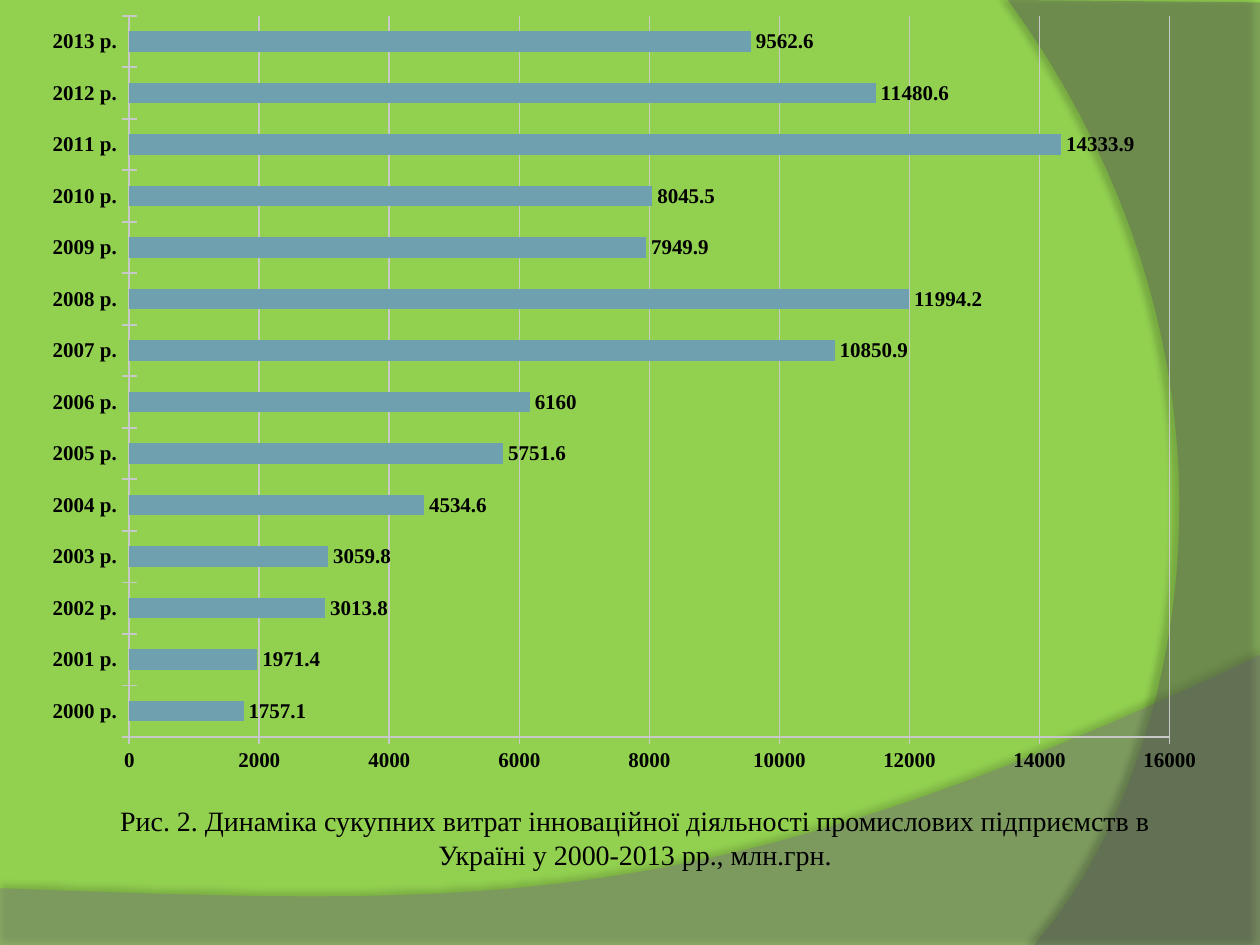
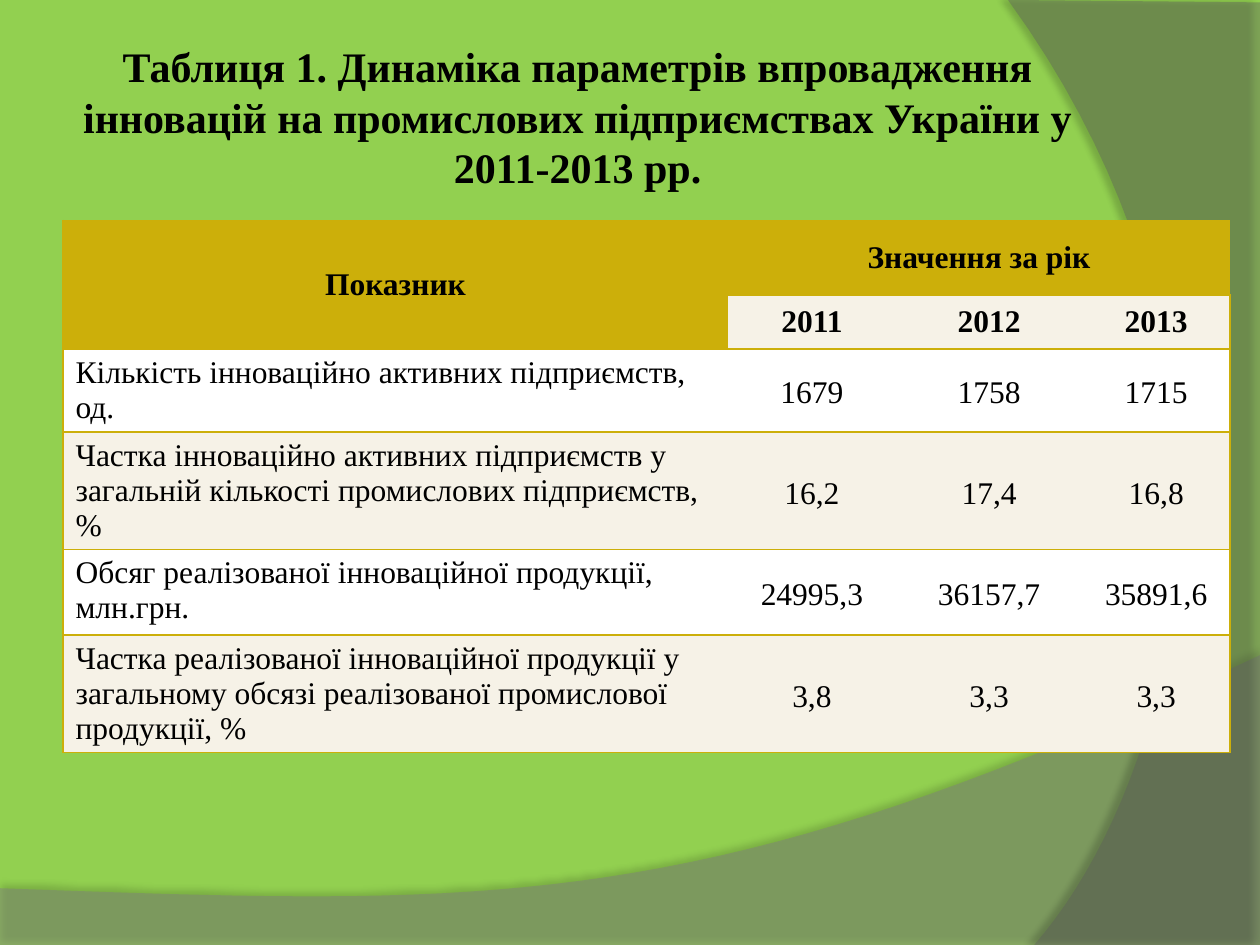
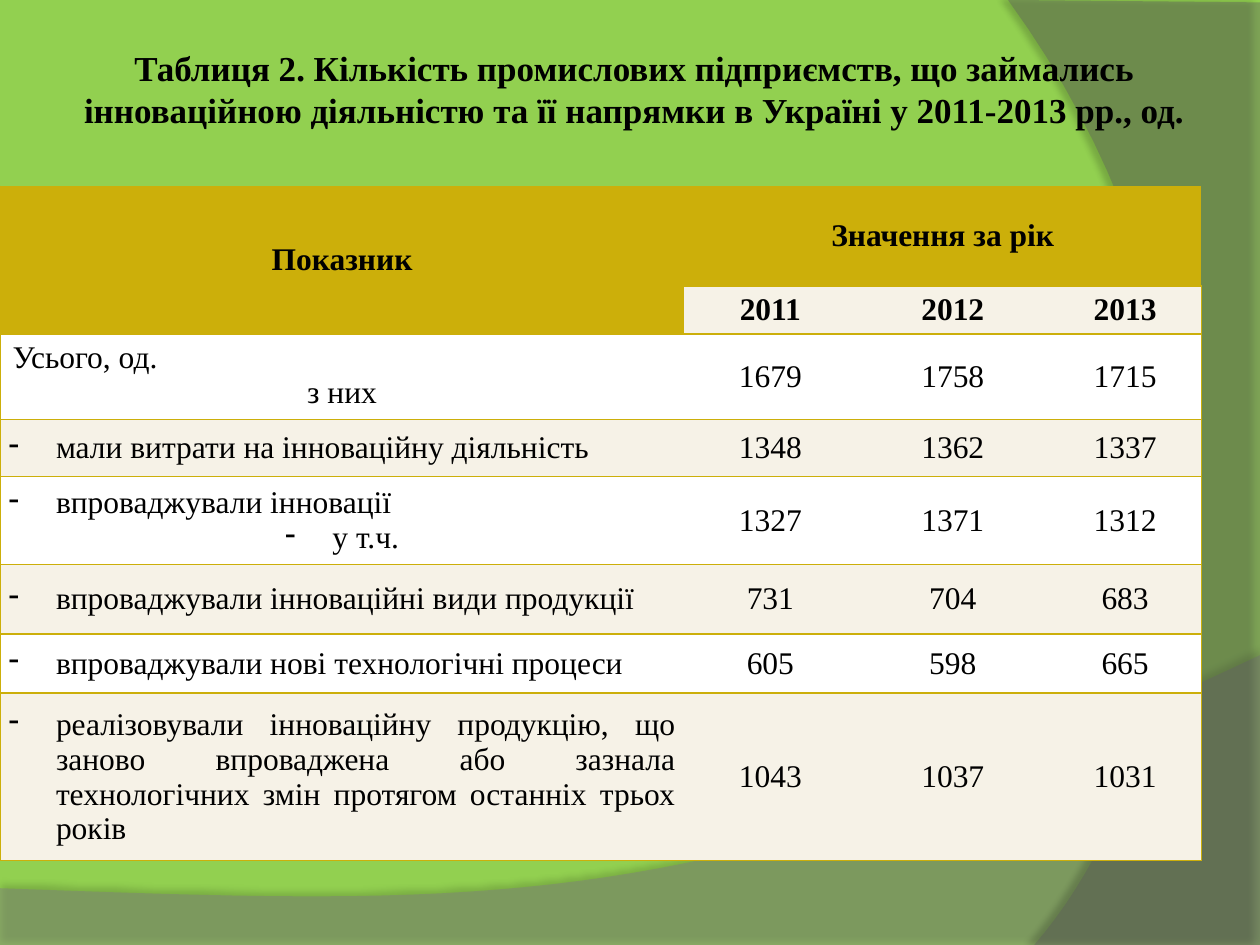
import pptx
import pptx.chart.data
import pptx.dml.color
import pptx.enum.chart
import pptx.enum.text
import pptx.oxml
import pptx.oxml.ns
import pptx.util

Pt = pptx.util.Pt
FONT = "Times New Roman"
HUE = {
    "back": "92D050", "text": "000000", "wave": "7F7F7F", "side": "5E5E5E",
    "gold": "CCAF0A", "cream": "F6F2E7", "white": "FFFFFF",
    "bar": "6EA0B0", "grid": "C8C8C8",
}
ALIGN = {
    "l": pptx.enum.text.PP_ALIGN.LEFT,
    "c": pptx.enum.text.PP_ALIGN.CENTER,
    "j": pptx.enum.text.PP_ALIGN.JUSTIFY,
}
MID = pptx.enum.text.MSO_ANCHOR.MIDDLE
YEARS = ["2011", "2012", "2013"]
COSTS = [1757.1, 1971.4, 3013.8, 3059.8, 4534.6, 5751.6, 6160,
         10850.9, 11994.2, 7949.9, 8045.5, 14333.9, 11480.6, 9562.6]
SHARES = [
    ("Кількість інноваційно активних підприємств, од.", "l",
     ["1679", "1758", "1715"]),
    ("Частка інноваційно активних підприємств у загальній кількості "
     "промислових підприємств, %", "l", ["16,2", "17,4", "16,8"]),
    ("Обсяг реалізованої інноваційної продукції, млн.грн.", "l",
     ["24995,3", "36157,7", "35891,6"]),
    ("Частка реалізованої інноваційної продукції у загальному обсязі "
     "реалізованої промислової продукції, %", "l", ["3,8", "3,3", "3,3"]),
]
FIRMS = [
    ("Усього, од.\nз них", "lc", ["1679", "1758", "1715"]),
    ("мали витрати на інноваційну діяльність", "j",
     ["1348", "1362", "1337"]),
    ("впроваджували інновації\nу т.ч.", "jc", ["1327", "1371", "1312"]),
    ("впроваджували інноваційні види продукції", "j",
     ["731", "704", "683"]),
    ("впроваджували нові технологічні процеси", "j",
     ["605", "598", "665"]),
    ("реалізовували інноваційну продукцію, що заново впроваджена або "
     "зазнала технологічних змін протягом останніх трьох років", "j",
     ["1043", "1037", "1031"]),
]


def color(name):
    """Return the named colour."""
    return pptx.dml.color.RGBColor.from_string(HUE[name])


def node(body):
    """Parse one drawing element."""
    head, tail = body.split(">", 1)
    tag, gap, rest = head.partition(" ")
    space = pptx.oxml.ns.nsdecls("a")
    return pptx.oxml.parse_xml(f"{tag} {space}{gap}{rest}>{tail}")


def style(font, size, bold=False):
    """Set the shared typeface with a size and weight."""
    font.name, font.size, font.bold = FONT, Pt(size), bold
    font.color.rgb = color("text")


def write(frame, text, size=18, bold=False, align="c", dash=False, space=None):
    """Fill a frame with one paragraph per line and one align letter each."""
    frame.word_wrap = True
    for i, (line, side) in enumerate(zip(text.split("\n"), align)):
        para = frame.add_paragraph() if i else frame.paragraphs[0]
        para.alignment = ALIGN[side]
        if space:
            para.line_spacing = space
        if dash:
            prop = para._p.get_or_add_pPr()
            prop.set("marL", str(Pt(27)))
            prop.set("indent", str(-Pt(27)))
            prop.append(node('<a:buChar char="-"></a:buChar>'))
        run = para.add_run()
        run.text = line
        style(run.font, size, bold)


def curve(ends, steps=40):
    """Sample a cubic curve given by four points."""
    def at(t, vals):
        a, b, c, d = vals
        u = 1 - t
        return u**3 * a + 3 * u * u * t * b + 3 * u * t * t * c + t**3 * d
    return [tuple(at(i / steps, vals) for vals in zip(*ends))
            for i in range(steps + 1)]


def sweep(slide, box, edge, ends, name, alpha, shade):
    """Draw a translucent curved band inside the box."""
    left, top = box
    dots = [(Pt(left + x), Pt(top + y)) for x, y in edge + curve(ends)]
    form = slide.shapes.build_freeform(*dots[0], scale=1)
    form.add_line_segments(dots[1:], close=True)
    band = form.convert_to_shape()
    band.fill.solid()
    band.fill.fore_color.rgb = color(name)
    band.line.fill.background()
    tint = band.fill._xPr.find(".//" + pptx.oxml.ns.qn("a:srgbClr"))
    tint.append(node(f'<a:alpha val="{alpha * 1000}"></a:alpha>'))
    dark, dist, turn = shade
    band._element.spPr.append(node(
        f'<a:effectLst><a:outerShdw blurRad="{Pt(4)}" dist="{Pt(dist)}" '
        f'dir="{turn * 60000}" algn="ctr" rotWithShape="0">'
        f'<a:srgbClr val="{HUE["text"]}"><a:alpha val="{dark * 1000}"/>'
        '</a:srgbClr></a:outerShdw></a:effectLst>'))
    return band


def theme(deck, slide):
    """Put the green ground and both curved bands on the master."""
    base = deck.slide_master
    base.background.fill.solid()
    base.background.fill.fore_color.rgb = color("back")
    wave = sweep(slide, (0, 374.4), [(0, 133.2), (0, 166), (720, 166)],
                 [(720, 0), (402.5, 150.5), (281.5, 143.3), (0, 133.2)],
                 "wave", 45, (35, 3.5, 270))
    side = sweep(slide, (576, 0), [(144, 1.4), (144, 540), (15, 540)],
                 [(15, 540), (97.2, 445.7), (157, 216), (0, 0)],
                 "side", 40, (45, 4, 180))
    for i, band in enumerate([wave, side], 2):
        base.shapes.element.insert(i, band._element)


def head(slide, box, text, size):
    """Place and format the slide title."""
    title = slide.shapes.title
    title.left, title.top, title.width, title.height = map(Pt, box)
    frame = title.text_frame
    frame.auto_size = pptx.enum.text.MSO_AUTO_SIZE.NONE
    frame.vertical_anchor = MID
    frame.margin_left = frame.margin_right = Pt(3.6)
    frame.margin_top = frame.margin_bottom = Pt(3.6)
    write(frame, text, size=size, bold=True)


def plot(slide, box):
    """Draw the bar chart of yearly costs."""
    enum = pptx.enum.chart
    data = pptx.chart.data.CategoryChartData()
    data.categories = [f"{2000 + i} р." for i in range(len(COSTS))]
    data.add_series("Series 1", COSTS)
    chart = slide.shapes.add_chart(
        enum.XL_CHART_TYPE.BAR_CLUSTERED, *map(Pt, box), data).chart
    style(chart.font, 12, True)
    chart.has_legend = chart.has_title = False
    bars = chart.plots[0]
    bars.gap_width = 150
    bars.vary_by_categories = False
    fill = bars.series[0].format.fill
    fill.solid()
    fill.fore_color.rgb = color("bar")
    bars.has_data_labels = True
    bars.data_labels.show_value = True
    bars.data_labels.position = enum.XL_LABEL_POSITION.OUTSIDE_END
    years, costs = chart.category_axis, chart.value_axis
    years.has_major_gridlines = False
    costs.has_major_gridlines = True
    costs.minimum_scale, costs.maximum_scale = 0, 16000
    costs.major_unit = 2000
    for axis in (years, costs):
        axis.major_tick_mark = enum.XL_TICK_MARK.CROSS
        axis.minor_tick_mark = enum.XL_TICK_MARK.NONE
    for part in (years, costs, costs.major_gridlines):
        part.format.line.color.rgb = color("grid")
        part.format.line.width = Pt(1)


def note(slide, box, text):
    """Add the chart caption."""
    area = slide.shapes.add_textbox(*map(Pt, box))
    write(area.text_frame, text, size=16)


def dress(cell, fill, edges):
    """Colour a cell and draw the named edges."""
    prop = cell._tc.get_or_add_tcPr()
    for side in "LRTB":
        paint = (f'<a:solidFill><a:srgbClr val="{HUE["gold"]}"/></a:solidFill>'
                 if side in edges else "<a:noFill/>")
        prop.append(node(f'<a:ln{side} w="{Pt(1)}">{paint}</a:ln{side}>'))
    cell.fill.solid()
    cell.fill.fore_color.rgb = color(fill)


def tight(cell):
    """Centre a cell vertically with narrow margins."""
    cell.vertical_anchor = MID
    cell.margin_left = cell.margin_right = Pt(5)
    cell.margin_top = cell.margin_bottom = 0


def grid(slide, spot, wide, high, rows, space=None):
    """Build a table of indicators by year at the given spot."""
    size = (sum(wide), sum(high))
    table = slide.shapes.add_table(
        len(high), len(wide), *map(Pt, spot + size)).table
    table.first_row = table.horz_banding = False
    for col, width in zip(table.columns, wide):
        col.width = Pt(width)
    for i, height in enumerate(high):
        table.rows[i].height = Pt(height)
        for j in range(len(wide)):
            gold = i == 0 or (i == 1 and j == 0)
            fill = "gold" if gold else "cream" if i % 2 else "white"
            edges = "TB" + {0: "L", len(wide) - 1: "R"}.get(j, "")
            dress(table.cell(i, j), fill, edges)
    table.cell(0, 0).merge(table.cell(1, 0))
    table.cell(0, 1).merge(table.cell(0, 3))
    heads = [(0, 0, "Показник"), (0, 1, "Значення за рік")]
    heads += [(1, j, year) for j, year in enumerate(YEARS, 1)]
    for i, j, text in heads:
        cell = table.cell(i, j)
        cell.vertical_anchor = MID
        write(cell.text_frame, text, bold=True)
    for i, (text, align, vals) in enumerate(rows, 2):
        cell = table.cell(i, 0)
        dash = align[0] == "j"
        if dash:
            tight(cell)
        write(cell.text_frame, text, align=align, dash=dash)
        for j, val in enumerate(vals, 1):
            cell = table.cell(i, j)
            tight(cell)
            write(cell.text_frame, val, space=space)


def main():
    """Build the three slides and save them."""
    deck = pptx.Presentation()
    deck.slide_width, deck.slide_height = Pt(720), Pt(540)
    bare, titled = deck.slide_layouts[6], deck.slide_layouts[5]

    slide = deck.slides.add_slide(bare)
    theme(deck, slide)
    note(slide, (39.6, 455.8, 646.6, 46),
         "Рис. 2. Динаміка сукупних витрат інноваційної діяльності "
         "промислових підприємств в Україні у 2000-2013 рр., млн.грн.")
    plot(slide, (16.5, 0, 680.5, 450))

    slide = deck.slides.add_slide(titled)
    head(slide, (36, 21.6, 588, 90),
         "Таблиця 1. Динаміка параметрів впровадження інновацій на "
         "промислових підприємствах України у 2011-2013 рр.", 24)
    grid(slide, (36, 126), (380, 96, 106.5, 84.5),
         (42.5, 31, 47.5, 62.6, 49, 62.6), SHARES, space=1.15)

    slide = deck.slides.add_slide(titled)
    head(slide, (22.3, 16.6, 680.4, 68.4),
         "Таблиця 2. Кількість промислових підприємств, що займались "
         "інноваційною діяльністю та її напрямки в Україні у "
         "2011-2013 рр., од.", 20)
    grid(slide, (0, 106.5), (391, 98.5, 110, 87),
         (57, 27.4, 49, 32.4, 50.4, 39.6, 33.8, 95.8), FIRMS)

    deck.save("out.pptx")


if __name__ == "__main__":
    main()
